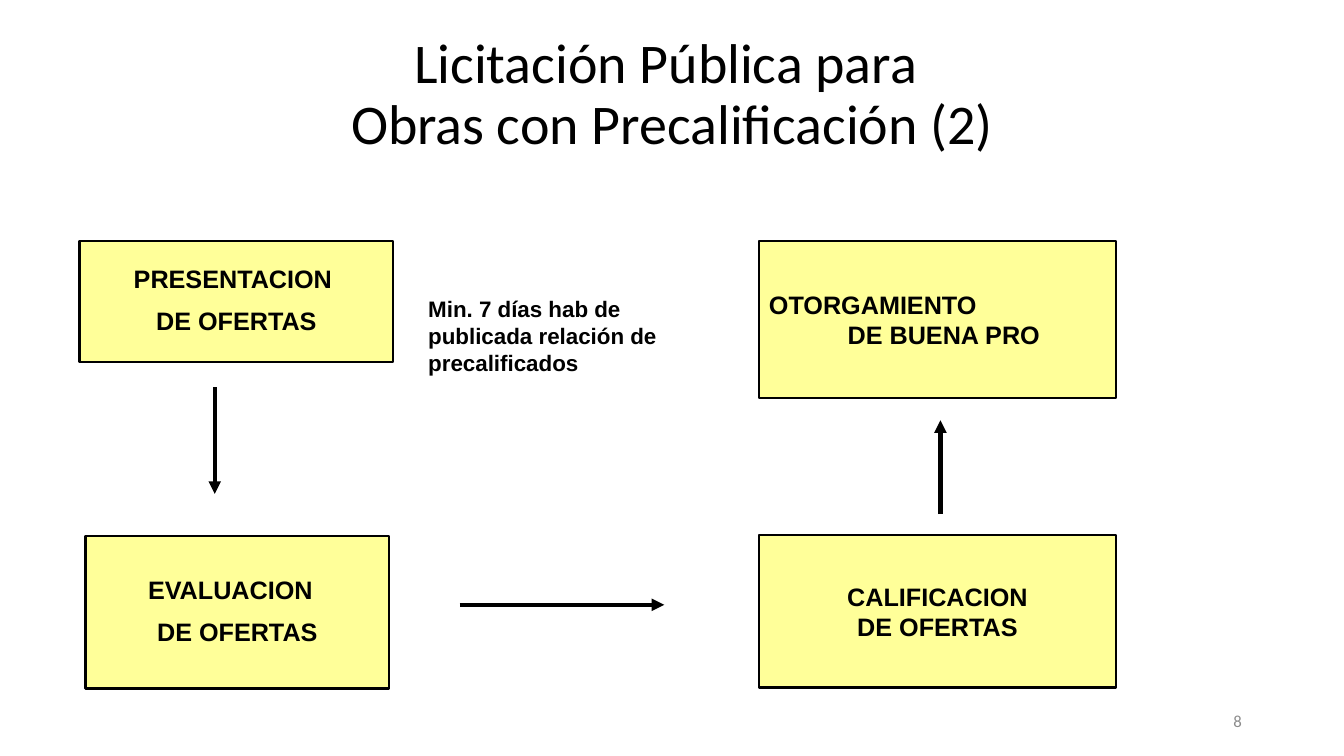
from lxml.etree import SubElement
from pptx import Presentation
from pptx.dml.color import RGBColor
from pptx.enum.shapes import MSO_CONNECTOR, MSO_SHAPE
from pptx.enum.text import MSO_ANCHOR as Anchor, MSO_AUTO_SIZE as AutoSize, PP_ALIGN as Align
from pptx.oxml.ns import qn
from pptx.util import Pt

BLACK = RGBColor(0, 0, 0)
YELLOW = RGBColor(0xFF, 0xFF, 0x99)
GRAY = RGBColor(0x8C, 0x8C, 0x8C)

TITLE = "Licitación Pública para \vObras con Precalificación (2)"
DEADLINE = "Min. 7 días hab de publicada relación de precalificados"
PAGE = "8"

# Each line: text, alignment, left indent, right indent
# Each step: left, top, width, height, line spacing, gap between lines, lines
STEPS = [
    (56.9, 172.1, 223.9, 86.4, 0.9, 10,
     [("PRESENTACION", Align.CENTER, 0, 5), ("DE OFERTAS", Align.CENTER, 0, 0)]),
    (61.2, 383, 216.7, 108.7, 0.9, 10,
     [("EVALUACION", Align.CENTER, 0, 10), ("DE OFERTAS", Align.CENTER, 0, 0)]),
    (542.2, 382.3, 254.9, 108.7, 1, 0,
     [("CALIFICACION", Align.CENTER, 0, 0), ("DE OFERTAS", Align.CENTER, 0, 0)]),
    (542.2, 172.1, 254.9, 112.3, 1, 0,
     [("OTORGAMIENTO", Align.LEFT, 0, 0), ("DE BUENA PRO", Align.CENTER, 9, 0)]),
]
ARROWS = [
    (153.4, 276.5, 153.4, 352.8),
    (328.3, 432, 474.5, 432),
    (671.8, 367.2, 671.8, 300.2),
]


def style(paragraph, size, face="Arial", color=BLACK, bold=False, align=Align.LEFT):
    font = paragraph.font
    font.size, font.name, font.bold = Pt(size), face, bold
    font.color.rgb = color
    paragraph.alignment = align


def place(shape, *box):
    shape.left, shape.top, shape.width, shape.height = map(Pt, box)


def add_step(slide, left, top, width, height, spacing, gap, lines):
    step = slide.shapes.add_shape(MSO_SHAPE.RECTANGLE, *map(Pt, (left, top, width, height)))
    step.shadow.inherit = False
    step.fill.solid()
    step.fill.fore_color.rgb = YELLOW
    step.line.color.rgb = BLACK
    step.line.width = Pt(1.75)
    frame = step.text_frame
    frame.word_wrap = True
    frame.vertical_anchor = Anchor.MIDDLE
    frame.margin_top = frame.margin_bottom = Pt(4)
    for i, (text, align, indent_left, indent_right) in enumerate(lines):
        line = frame.add_paragraph() if i else frame.paragraphs[0]
        line.text = text
        line.line_spacing = spacing
        line.space_before = Pt(gap if i else 0)
        style(line, 18, bold=True, align=align)
        properties = line._p.get_or_add_pPr()
        properties.set("marL", str(Pt(indent_left)))
        properties.set("marR", str(Pt(indent_right)))


def add_arrow(slide, *ends):
    arrow = slide.shapes.add_connector(MSO_CONNECTOR.STRAIGHT, *map(Pt, ends))
    arrow.line.color.rgb = BLACK
    arrow.line.width = Pt(3)
    SubElement(arrow.line._get_or_add_ln(), qn("a:tailEnd"), type="triangle")
    SubElement(arrow._element.spPr, qn("a:effectLst"))


def add_label(slide, text, box, anchor, **look):
    label = slide.shapes.add_textbox(*map(Pt, box))
    frame = label.text_frame
    frame.word_wrap = True
    frame.vertical_anchor = anchor
    frame.text = text
    style(frame.paragraphs[0], **look)


def main():
    deck = Presentation()
    deck.slide_width, deck.slide_height = Pt(960), Pt(540)
    slide = deck.slides.add_slide(deck.slide_layouts[5])

    title = slide.shapes.title
    place(title, 0, 31.7, 960, 73.4)
    frame = title.text_frame
    frame.text = TITLE
    frame.auto_size = AutoSize.NONE
    frame.vertical_anchor = Anchor.MIDDLE
    frame.paragraphs[0].line_spacing = 0.9
    style(frame.paragraphs[0], 40, "Calibri", align=Align.CENTER)

    for step in STEPS:
        add_step(slide, *step)
    for ends in ARROWS:
        add_arrow(slide, *ends)
    add_label(slide, DEADLINE, (298.8, 207.4, 219.6, 65.5), Anchor.TOP, size=16, bold=True)
    add_label(slide, PAGE, (678.2, 500.4, 216, 28.8), Anchor.MIDDLE,
              size=12, face="Calibri", color=GRAY, align=Align.RIGHT)
    deck.save("out.pptx")


if __name__ == "__main__":
    main()
